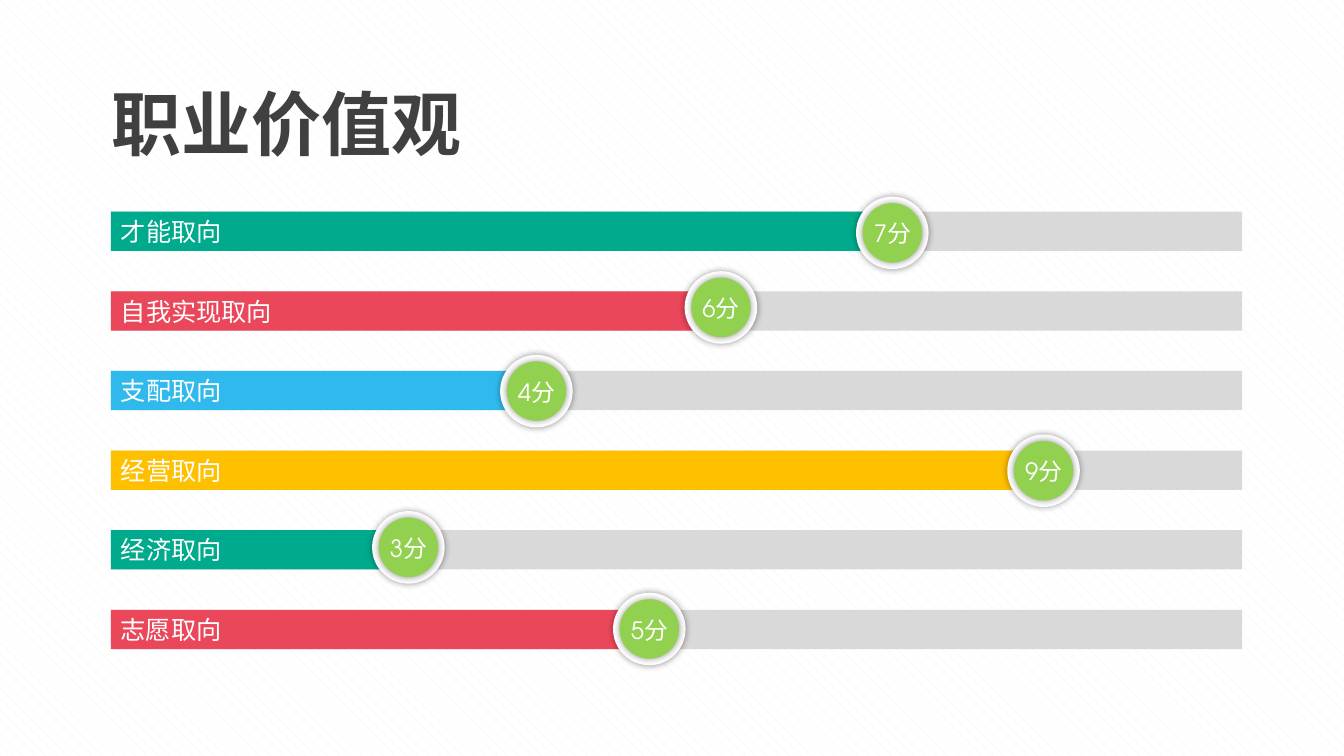
from lxml import etree
from pptx import Presentation
from pptx.dml.color import RGBColor
from pptx.enum.dml import MSO_PATTERN
from pptx.enum.shapes import MSO_SHAPE
from pptx.enum.text import MSO_ANCHOR, PP_ALIGN
from pptx.oxml import parse_xml
from pptx.oxml.ns import qn
from pptx.util import Inches, Pt

RECTANGLE, OVAL = MSO_SHAPE.RECTANGLE, MSO_SHAPE.OVAL
MIDDLE, LEFT, CENTER = MSO_ANCHOR.MIDDLE, PP_ALIGN.LEFT, PP_ALIGN.CENTER
CJK_FONT, SCORE_FONT = "Noto Sans CJK SC", "TeX Gyre Adventor"
WHITE = "FFFFFF"
SOFT_SHADOW = (
    '<a:outerShdw xmlns:a="http://schemas.openxmlformats.org/drawingml/2006/main" '
    'blurRad="63500" dist="0" algn="ctr" rotWithShape="0">'
    '<a:srgbClr val="000000"><a:alpha val="40000"/></a:srgbClr></a:outerShdw>'
)

BAR_LEFT, BAR_WIDTH, BAR_HEIGHT = 1.1, 11.22, 0.39
FIRST_BAR_TOP, BAR_PITCH = 2.1, 0.79
RING_SIZE, DISC_SIZE = 0.72, 0.59

# label, score, bar length, bar colour, badge top
VALUES = [
    ("才能取向", "7分", 7.75, "00AA8C", 1.95),
    ("自我实现取向", "6分", 6.05, "EB475B", 2.69),
    ("支配取向", "4分", 4.22, "30B9EC", 3.52),
    ("经营取向", "9分", 9.25, "FFC000", 4.31),
    ("经济取向", "3分", 2.95, "00AA8C", 5.07),
    ("志愿取向", "5分", 5.34, "EB475B", 5.88),
]


def add_filled(shapes, preset, left, top, width, height, color):
    shape = shapes.add_shape(
        preset, Inches(left), Inches(top), Inches(width), Inches(height))
    shape.shadow.inherit = False
    shape.fill.solid()
    shape.fill.fore_color.rgb = RGBColor.from_string(color)
    shape.line.fill.background()
    return shape


def write(frame, text, size, color, font, align=LEFT, bold=False):
    """Add one run, naming the font for both Latin and East Asian text."""
    frame.word_wrap = True
    frame.vertical_anchor = MIDDLE
    paragraph = frame.paragraphs[0]
    paragraph.alignment = align
    run = paragraph.add_run()
    run.text = text
    run.font.size = Pt(size)
    run.font.bold = bold
    run.font.name = font
    run.font.color.rgb = RGBColor.from_string(color)
    east_asian = etree.SubElement(run.font._element, qn("a:ea"))
    east_asian.set("typeface", font)


prs = Presentation()
prs.slide_width, prs.slide_height = Inches(13.33), Inches(7.5)
slide = prs.slides.add_slide(prs.slide_layouts[5])

background = slide.background.fill
background.patterned()
background.pattern = MSO_PATTERN.SHINGLE
background.fore_color.rgb = RGBColor.from_string("F2F2F2")
background.back_color.rgb = RGBColor.from_string(WHITE)

title = slide.shapes.title
title.left, title.top = Inches(1.01), Inches(0.75)
title.width, title.height = Inches(11.31), Inches(0.94)
write(title.text_frame, "职业价值观", 50, "404040", CJK_FONT, bold=True)

bar_tops = [FIRST_BAR_TOP + BAR_PITCH * row for row in range(len(VALUES))]

for top in bar_tops:
    add_filled(slide.shapes, RECTANGLE, BAR_LEFT, top, BAR_WIDTH, BAR_HEIGHT, "D9D9D9")

for top, (label, _, length, color, _) in zip(bar_tops, VALUES):
    bar = add_filled(slide.shapes, RECTANGLE, BAR_LEFT, top, length, BAR_HEIGHT, color)
    write(bar.text_frame, label, 18, WHITE, CJK_FONT)

# Each badge is centred on the end of its bar
for _, score, length, _, badge_top in VALUES:
    badge = slide.shapes.add_group_shape().shapes
    badge_left = BAR_LEFT + length - RING_SIZE / 2
    for size, color in ((RING_SIZE, WHITE), (DISC_SIZE, "92D050")):
        inset = (RING_SIZE - size) / 2
        circle = add_filled(
            badge, OVAL, badge_left + inset, badge_top + inset, size, size, color)
        circle._element.spPr.find(qn("a:effectLst")).append(parse_xml(SOFT_SHADOW))
    score_box = badge.add_textbox(
        Inches(badge_left), Inches(badge_top + 0.17), Inches(RING_SIZE), Inches(0.39))
    write(score_box.text_frame, score, 17, WHITE, SCORE_FONT, CENTER)

prs.save("out.pptx")
